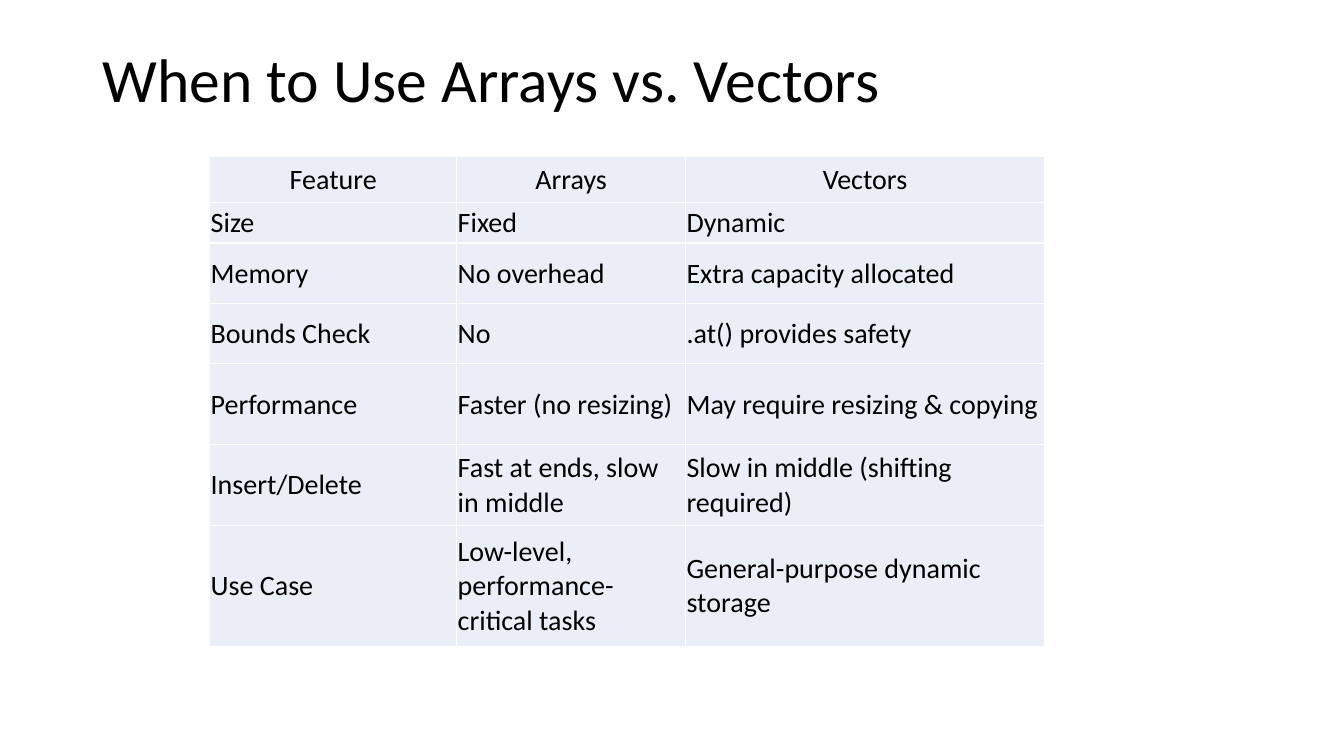
from dataclasses import dataclass

from lxml.etree import SubElement
from pptx import Presentation
from pptx.dml.color import RGBColor
from pptx.enum.text import MSO_ANCHOR as Anchor, PP_ALIGN as Align
from pptx.oxml.ns import qn
from pptx.util import Inches, Pt

TITLE = "When to Use Arrays vs. Vectors"
COMPARISON = [
    ("Feature", "Arrays", "Vectors"),
    ("Size", "Fixed", "Dynamic"),
    ("Memory", "No overhead", "Extra capacity allocated"),
    ("Bounds Check", "No", ".at() provides safety"),
    ("Performance", "Faster (no resizing)", "May require resizing & copying"),
    ("Insert/Delete", "Fast at ends, slow in middle", "Slow in middle (shifting required)"),
    ("Use Case", "Low-level, performance-critical tasks", "General-purpose dynamic storage"),
]
COLUMN_WIDTHS = (2.45, 2.27, 3.56)
ROW_HEIGHTS = (0.46, 0.4, 0.6, 0.6, 0.8, 0.8, 1.2)
SLIDE_SIZE = (13.33, 7.5)
TITLE_BOX = (0.92, 0.4, 11.5, 0.83)
TABLE_CORNER = (2.08, 1.55)
CELL_INSET = 0.01


@dataclass(frozen=True)
class Theme:
    font: str = "Calibri"
    ink: str = "000000"
    cell: str = "EAEFF7"
    border: str = "FFFFFF"
    border_width: int = 1
    title_size: int = 44
    table_size: int = 20


theme = Theme()


def style_text(para, size, align):
    para.alignment = align
    for span in para.runs:
        span.font.name = theme.font
        span.font.size = Pt(size)
        span.font.bold = False
        span.font.color.rgb = RGBColor.from_string(theme.ink)


def add_borders(cell):
    properties = cell._tc.get_or_add_tcPr()
    for side in ("L", "R", "T", "B"):
        line = SubElement(properties, qn(f"a:ln{side}"), w=str(Pt(theme.border_width)))
        fill = SubElement(line, qn("a:solidFill"))
        SubElement(fill, qn("a:srgbClr"), val=theme.border)


def style_cell(cell, text, align):
    cell.text = text
    cell.vertical_anchor = Anchor.MIDDLE
    cell.margin_left = cell.margin_right = cell.margin_top = Inches(CELL_INSET)
    cell.margin_bottom = 0
    add_borders(cell)
    cell.fill.solid()
    cell.fill.fore_color.rgb = RGBColor.from_string(theme.cell)
    style_text(cell.text_frame.paragraphs[0], theme.table_size, align)


def add_title(page):
    title = page.shapes.title
    title.left, title.top, title.width, title.height = map(Inches, TITLE_BOX)
    frame = title.text_frame
    frame.text = TITLE
    frame.word_wrap = True
    frame.vertical_anchor = Anchor.MIDDLE
    para = frame.paragraphs[0]
    para.line_spacing = 0.9
    style_text(para, theme.title_size, Align.LEFT)


def add_comparison(page):
    size = (sum(COLUMN_WIDTHS), sum(ROW_HEIGHTS))
    table = page.shapes.add_table(
        len(ROW_HEIGHTS), len(COLUMN_WIDTHS), *map(Inches, TABLE_CORNER + size)
    ).table
    table.first_row = table.horz_banding = False
    for column, width in zip(table.columns, COLUMN_WIDTHS):
        column.width = Inches(width)
    for index, (row, height) in enumerate(zip(table.rows, ROW_HEIGHTS)):
        row.height = Inches(height)
        align = Align.LEFT if index else Align.CENTER
        for cell, text in zip(row.cells, COMPARISON[index]):
            style_cell(cell, text, align)


def main():
    deck = Presentation()
    deck.slide_width, deck.slide_height = map(Inches, SLIDE_SIZE)
    page = deck.slides.add_slide(deck.slide_layouts.get_by_name("Title Only"))
    add_title(page)
    add_comparison(page)
    deck.save("out.pptx")


if __name__ == "__main__":
    main()
